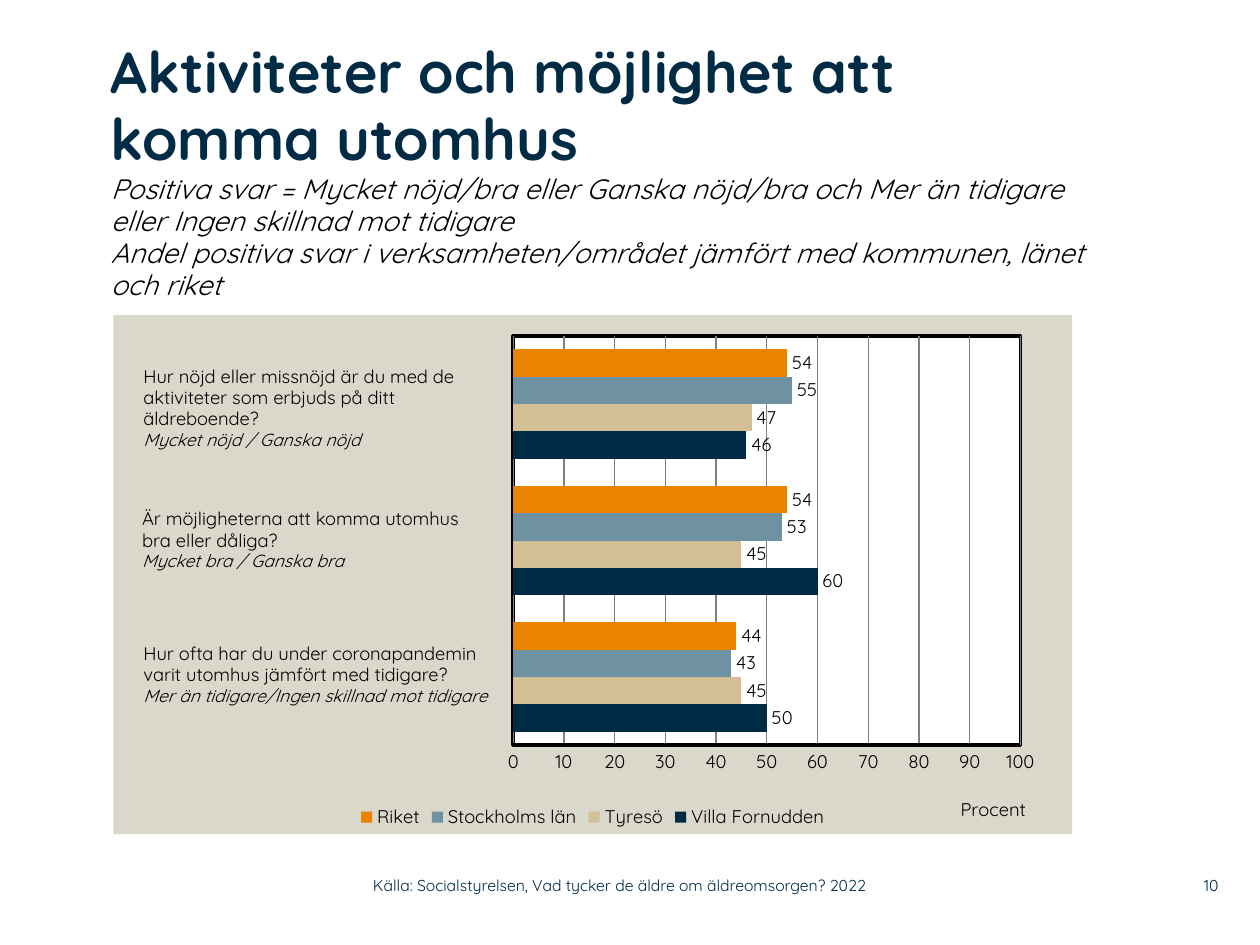
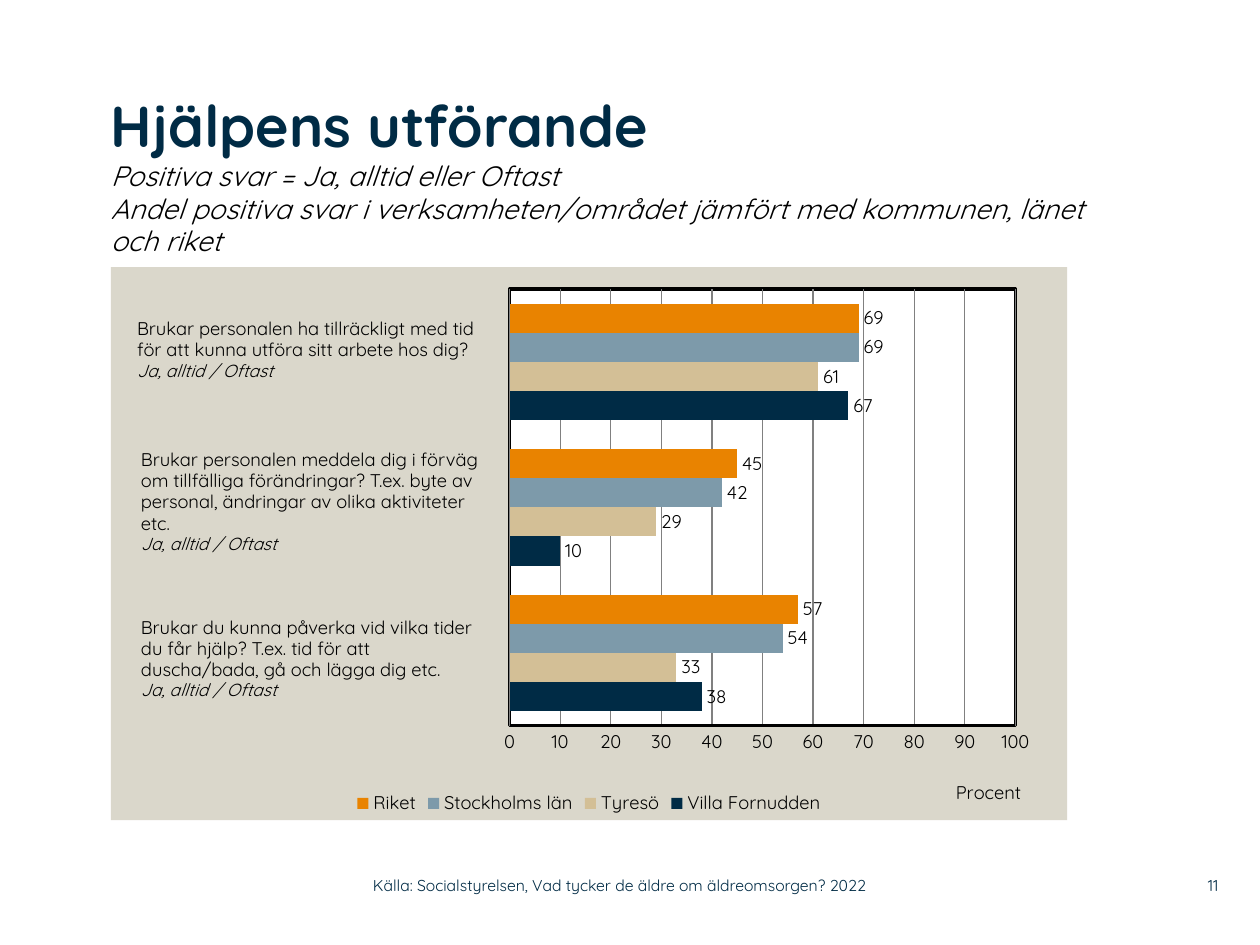
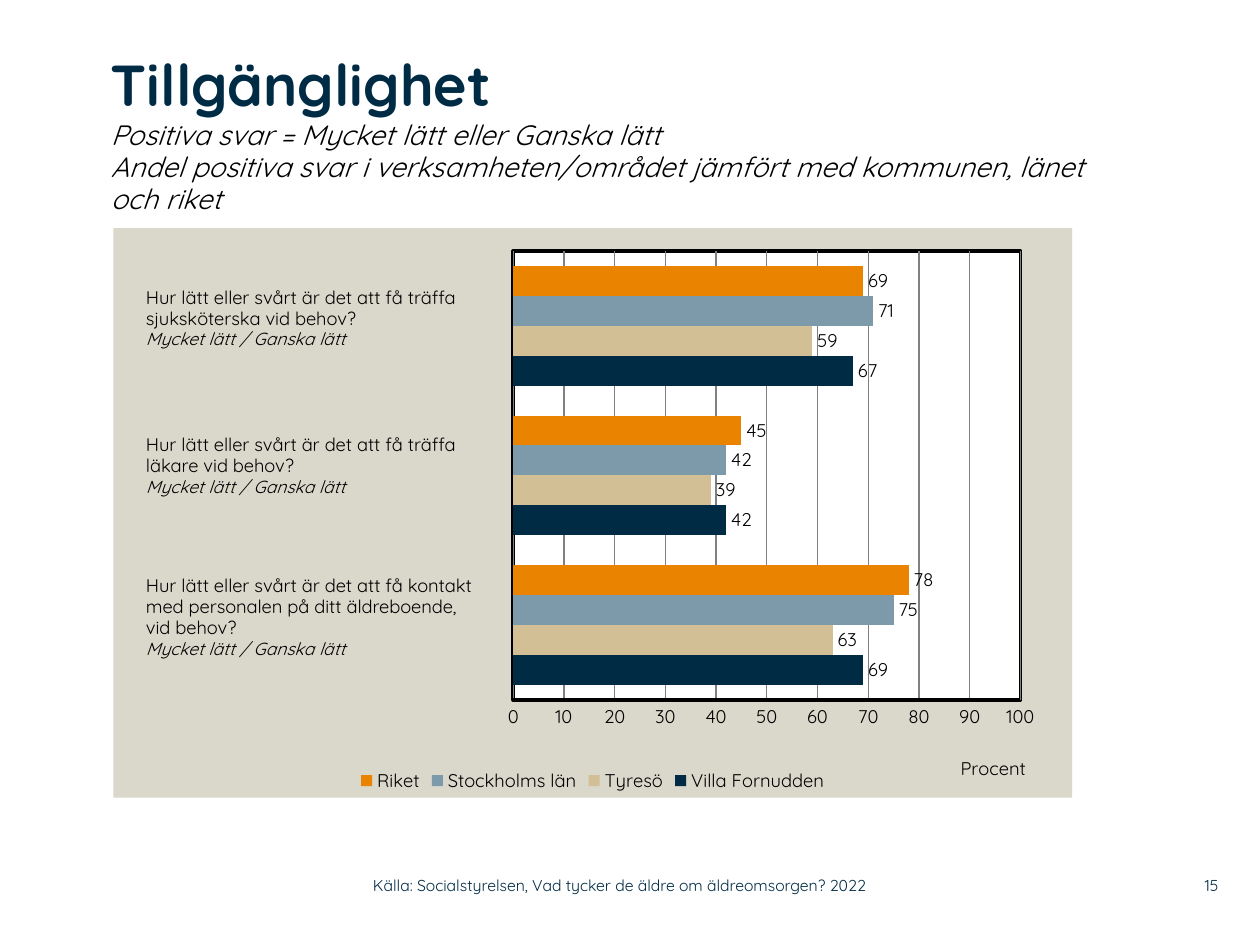
from dataclasses import dataclass

import lxml.etree
import pptx
import pptx.chart.data
import pptx.dml.color
import pptx.enum.chart
import pptx.enum.text
import pptx.oxml
import pptx.oxml.ns
import pptx.util

Inches = pptx.util.Inches
Pt = pptx.util.Pt
qn = pptx.oxml.ns.qn
Align = pptx.enum.text.PP_ALIGN
Anchor = pptx.enum.text.MSO_ANCHOR


@dataclass(frozen=True)
class Theme:
    font: str = "Quicksand"
    navy: str = "002B45"
    black: str = "000000"
    white: str = "FFFFFF"
    panel: str = "DAD7CB"
    grid: str = "808080"
    sand: str = "D3BF96"
    orange: str = "E98300"
    steel: str = "7D9AAA"
    steel_dark: str = "6F92A2"
    title_size: float = 33
    subtitle_size: float = 16
    body_size: float = 10.5
    answer_size: float = 10
    footer_size: float = 9
    line_spacing: float = 0.96


T = Theme()
SOURCE = "Källa: Socialstyrelsen, Vad tycker de äldre om äldreomsorgen? 2022"
COMPARISON = ("Andel positiva svar i verksamheten/området jämfört med kommunen, "
              "länet och riket")
SERIES = ("Villa Fornudden", "Tyresö", "Stockholms län", "Riket")

# Values run from the bottom question to the top one, in the order of SERIES.
# Each question is (left, top, width), its paragraphs, and the positive answers.
PAGES = [
    dict(
        number="10", title="Aktiviteter och möjlighet att komma utomhus",
        title_box=(0.88, 0.32, 7.8, 1.89),
        positive="Positiva svar = Mycket nöjd/bra eller Ganska nöjd/bra och "
                 "Mer än tidigare eller Ingen skillnad mot tidigare",
        chart_box=(0.9, 2.5, 7.61, 4.12), county_color=T.steel_dark,
        values=[(50, 60, 46), (45, 45, 47), (43, 53, 55), (44, 54, 54)],
        questions=[
            ((1.04, 2.86, 3),
             ["Hur nöjd eller missnöjd är du med de aktiviteter som erbjuds "
              "på ditt äldreboende?"],
             "Mycket nöjd / Ganska nöjd"),
            ((1.03, 3.99, 3.01),
             ["Är möjligheterna att komma utomhus", "bra eller dåliga?"],
             "Mycket bra / Ganska bra"),
            ((1.04, 5.06, 3.01),
             ["Hur ofta har du under coronapandemin varit utomhus jämfört "
              "med tidigare?"],
             "Mer än tidigare/Ingen skillnad mot tidigare"),
        ]),
    dict(
        number="11", title="Hjälpens utförande",
        title_box=(0.88, 0.75, 7.79, 1.21),
        positive="Positiva svar = Ja, alltid eller Oftast",
        chart_box=(0.88, 2.12, 7.59, 4.39), county_color=T.steel,
        values=[(38, 10, 67), (33, 29, 61), (54, 42, 69), (57, 45, 69)],
        questions=[
            ((0.99, 2.48, 2.97),
             ["Brukar personalen ha tillräckligt med tid",
              "för att kunna utföra sitt arbete hos dig?"],
             "Ja, alltid / Oftast"),
            ((1.02, 3.52, 2.99),
             ["Brukar personalen meddela dig i förväg om tillfälliga "
              "förändringar? T.ex. byte av personal, ändringar av olika "
              "aktiviteter etc."],
             "Ja, alltid / Oftast"),
            ((1.02, 4.85, 2.97),
             ["Brukar du kunna påverka vid vilka tider",
              "du får hjälp? T.ex. tid för att",
              "duscha/bada, gå och lägga dig etc."],
             "Ja, alltid / Oftast"),
        ]),
    dict(
        number="15", title="Tillgänglighet",
        title_box=(0.88, 0.42, 7.77, 1.39),
        positive="Positiva svar = Mycket lätt eller Ganska lätt",
        chart_box=(0.9, 1.81, 7.61, 4.52), county_color=T.steel,
        values=[(69, 42, 67), (63, 39, 59), (75, 42, 71), (78, 45, 69)],
        questions=[
            ((1.06, 2.23, 2.99),
             ["Hur lätt eller svårt är det att få träffa sjuksköterska "
              "vid behov?"],
             "Mycket lätt / Ganska lätt"),
            ((1.06, 3.4, 2.93),
             ["Hur lätt eller svårt är det att få träffa",
              "läkare vid behov?"],
             "Mycket lätt / Ganska lätt"),
            ((1.06, 4.52, 3.01),
             ["Hur lätt eller svårt är det att få kontakt",
              "med personalen på ditt äldreboende,", "vid behov?"],
             "Mycket lätt / Ganska lätt"),
        ]),
]


def rgb(color):
    return pptx.dml.color.RGBColor.from_string(color)


def inches(box):
    return [Inches(v) for v in box]


def set_font(font, size, color=T.black, bold=False, italic=False):
    font.name, font.size = T.font, Pt(size)
    font.bold, font.italic = bold, italic
    font.color.rgb = rgb(color)


def write(tf, lines, align=Align.LEFT):
    """Fill a frame with one paragraph per (text, font settings) pair."""
    for i, (text, style) in enumerate(lines):
        p = tf.add_paragraph() if i else tf.paragraphs[0]
        p.alignment, p.line_spacing = align, T.line_spacing
        p.space_before = p.space_after = Pt(0)
        r = p.add_run()
        r.text = text
        set_font(r.font, **style)


def clear_margins(tf):
    tf.margin_left = tf.margin_right = tf.margin_top = tf.margin_bottom = 0


def add_title(s, box, title, positive):
    sp = s.shapes.title
    sp.left, sp.top, sp.width, sp.height = inches(box)
    tf = sp.text_frame
    tf.word_wrap, tf.vertical_anchor = True, Anchor.TOP
    tf.auto_size = pptx.enum.text.MSO_AUTO_SIZE.NONE
    clear_margins(tf)
    subtitle = dict(size=T.subtitle_size, italic=True)
    write(tf, [(title, dict(size=T.title_size, color=T.navy, bold=True)),
               (positive, subtitle), (COMPARISON, subtitle)])


def add_question(s, box, lines, answer):
    tf = s.shapes.add_textbox(*inches((*box, 0.81))).text_frame
    tf.word_wrap = True
    tf.auto_size = pptx.enum.text.MSO_AUTO_SIZE.SHAPE_TO_FIT_TEXT
    write(tf, [(line, dict(size=T.body_size)) for line in lines]
          + [(answer, dict(size=T.answer_size, italic=True))])


def add_footer(s, number):
    for left, width, text, align in ((2.96, 4.43, SOURCE, Align.LEFT),
                                     (9.2, 0.47, number, Align.RIGHT)):
        tf = s.shapes.add_textbox(*inches((left, 6.89, width, 0.29))).text_frame
        tf.word_wrap, tf.vertical_anchor = True, Anchor.MIDDLE
        clear_margins(tf)
        write(tf, [(text, dict(size=T.footer_size, color=T.navy))], align)


def area_format(fill, line=""):
    """Shape properties for a chart area; line is an optional outline colour."""
    ns = pptx.oxml.ns.nsdecls("c", "a")
    outline = (f'<a:ln w="{Pt(2)}"><a:solidFill><a:srgbClr val="{line}"/>'
               "</a:solidFill></a:ln>" if line else "<a:ln><a:noFill/></a:ln>")
    return pptx.oxml.parse_xml(
        f'<c:spPr {ns}><a:solidFill><a:srgbClr val="{fill}"/></a:solidFill>'
        f"{outline}</c:spPr>")


def set_layout(parent, **places):
    """Place a chart part by fractions of the chart; w and h mark a plot area."""
    for old in parent.findall(qn("c:layout")):
        parent.remove(old)
    layout = lxml.etree.Element(qn("c:layout"))
    manual = lxml.etree.SubElement(layout, qn("c:manualLayout"))
    settings = {"layoutTarget": "inner"} if "w" in places else {}
    settings |= {"xMode": "edge", "yMode": "edge", **places}
    for name, value in settings.items():
        lxml.etree.SubElement(manual, qn("c:" + name)).set("val", str(value))
    parent.insert(0 if parent.find(qn("c:tx")) is None else 1, layout)


def format_value_axis(axis):
    axis.minimum_scale, axis.maximum_scale, axis.major_unit = 0, 100, 10
    axis.major_tick_mark = pptx.enum.chart.XL_TICK_MARK.NONE
    axis.minor_tick_mark = pptx.enum.chart.XL_TICK_MARK.NONE
    axis.format.line.color.rgb = rgb(T.black)
    axis.format.line.width = Pt(2)
    axis.has_major_gridlines = True
    axis.major_gridlines.format.line.color.rgb = rgb(T.grid)
    axis.major_gridlines.format.line.width = Pt(0.75)
    set_font(axis.tick_labels.font, T.body_size)
    title = axis.axis_title
    r = title.text_frame.paragraphs[0].add_run()
    r.text = "Procent"
    set_font(r.font, T.body_size)
    set_layout(title._element, x=0.88, y=0.92)


def add_bar_chart(s, box, values, county_color):
    data = pptx.chart.data.CategoryChartData(number_format="0")
    data.categories = ["1", "2", "3"]
    for name, numbers in zip(SERIES, values):
        data.add_series(name, numbers)
    chart = s.shapes.add_chart(pptx.enum.chart.XL_CHART_TYPE.BAR_CLUSTERED,
                               *inches(box), data).chart
    chart.has_title = False
    set_font(chart.font, T.body_size)
    chart.has_legend = True
    chart.legend.position = pptx.enum.chart.XL_LEGEND_POSITION.BOTTOM
    chart.legend.include_in_layout = False
    set_font(chart.legend.font, T.body_size)
    chart.category_axis.visible = False
    format_value_axis(chart.value_axis)

    plot = chart.plots[0]
    plot.gap_width, plot.overlap, plot.vary_by_categories = 100, 0, False
    for series, color in zip(plot.series,
                             (T.navy, T.sand, county_color, T.orange)):
        series.format.fill.solid()
        series.format.fill.fore_color.rgb = rgb(color)
        labels = series.data_labels
        labels.show_value = True
        labels.position = pptx.enum.chart.XL_LABEL_POSITION.OUTSIDE_END
        set_font(labels.font, T.body_size)

    chart_part = chart._chartSpace.find(qn("c:chart"))
    chart_part.addnext(area_format(T.panel))
    plot_area = chart_part.find(qn("c:plotArea"))
    plot_area.append(area_format(T.white, T.black))
    set_layout(plot_area, x=0.417, y=0.04, w=0.529, h=0.789)


def add_result_slide(prs, page):
    s = prs.slides.add_slide(prs.slide_layouts[5])
    add_title(s, page["title_box"], page["title"], page["positive"])
    add_bar_chart(s, page["chart_box"], page["values"], page["county_color"])
    for question in page["questions"]:
        add_question(s, *question)
    add_footer(s, page["number"])


def main():
    prs = pptx.Presentation()
    prs.slide_width, prs.slide_height = Inches(10), Inches(7.5)
    for page in PAGES:
        add_result_slide(prs, page)
    prs.save("out.pptx")


if __name__ == "__main__":
    main()
